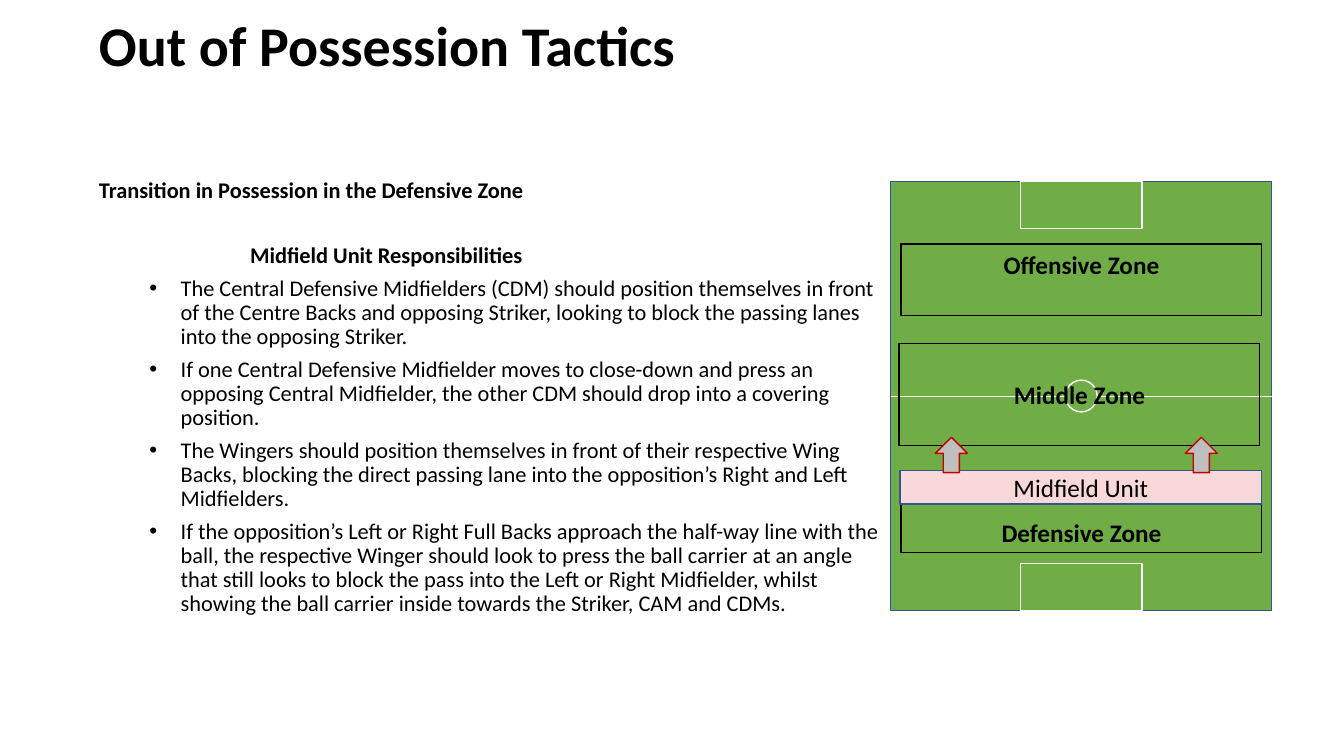
from pptx import Presentation
from pptx.dml.color import RGBColor
from pptx.enum import shapes, text
from pptx.oxml.ns import qn
from pptx.util import Cm, Pt
from lxml import etree

# Content
TITLE = "Out of Possession Tactics"
# (text, kind of paragraph)
BODY = [
    ("Transition in Possession in the Defensive Zone", "topic"),
    ("Midfield Unit Responsibilities", "heading"),
    ("The Central Defensive Midfielders (CDM) should position themselves in front of the "
     "Centre Backs and opposing Striker, looking to block the passing lanes into the "
     "opposing Striker.", "bullet"),
    ("If one Central Defensive Midfielder moves to close-down and press an opposing Central "
     "Midfielder, the other CDM should drop into a covering position.", "bullet"),
    ("The Wingers should position themselves in front of their respective Wing Backs, "
     "blocking the direct passing lane into the opposition’s Right and Left Midfielders.",
     "bullet"),
    ("If the opposition’s Left or Right Full Backs approach the half-way line with the ball, "
     "the respective Winger should look to press the ball carrier at an angle that still "
     "looks to block the pass into the Left or Right Midfielder, whilst showing the ball "
     "carrier inside towards the Striker, CAM and CDMs.", "bullet"),
]
# (name, left, top, height, anchor), lengths in cm
ZONES = [
    ("Offensive Zone", 22.71, 6.15, 1.8, text.MSO_ANCHOR.TOP),
    ("Middle Zone", 22.66, 8.66, 2.57, text.MSO_ANCHOR.MIDDLE),
    ("Defensive Zone", 22.71, 12.12, 1.8, text.MSO_ANCHOR.BOTTOM),
]
UNIT = "Midfield Unit"

# Format
COLORS = {"grass": "70AD47", "edge": "325491", "white": "FFFFFF", "black": "000000",
          "unit": "F8D8D8", "arrow": "BFBFBF", "red": "C00000"}
# kind: (left margin cm, first-line indent cm, bold, space after pt)
KINDS = {"topic": (0, 0, True, 29), "heading": (3.81, 0, True, 6),
         "bullet": (2.06, -0.79, False, 6)}
PITCH = (22.45, 4.57, 9.6, 10.82)
ZONE_W = 9.09
GOAL_W, GOAL_H = 3.07, 1.19
CIRCLE = 0.8
ARROW_W, ARROW_H, ARROW_TOP = 0.81, 0.89, 11.02
ARROW_LEFTS = (23.57, 29.87)

RECT = shapes.MSO_SHAPE.RECTANGLE


def rgb(name):
    return RGBColor.from_string(COLORS[name])


def set_font(font, size, bold=False):
    for key, value in {"name": "Calibri", "size": Pt(size), "bold": bold}.items():
        setattr(font, key, value)
    font.color.rgb = rgb("black")


def place(sp, box):
    for key, value in zip(("left", "top", "width", "height"), box):
        setattr(sp, key, Cm(value))


def add_box(kind, box, line, fill=None):
    sp = s.shapes.add_shape(kind, *[Cm(v) for v in box])
    sp.shadow.inherit = False
    if fill:
        sp.fill.solid()
        sp.fill.fore_color.rgb = rgb(fill)
    else:
        sp.fill.background()
    sp.line.color.rgb = rgb(line)
    sp.line.width = Pt(1)
    return sp


def add_label(sp, label, anchor, bold):
    tf = sp.text_frame
    tf.word_wrap = True
    tf.vertical_anchor = anchor
    p = tf.paragraphs[0]
    p.alignment = text.PP_ALIGN.CENTER
    r = p.add_run()
    r.text = label
    set_font(r.font, 18, bold)


def set_frame(tf):
    for key, value in {"word_wrap": True, "auto_size": text.MSO_AUTO_SIZE.NONE,
                       "vertical_anchor": text.MSO_ANCHOR.MIDDLE}.items():
        setattr(tf, key, value)


prs = Presentation()
prs.slide_width, prs.slide_height = Cm(33.87), Cm(19.05)
s = prs.slides.add_slide(prs.slide_layouts[1])

# Title
title, body = s.placeholders
place(title, (2.24, 0.33, 15.6, 1.8))
set_frame(title.text_frame)
p = title.text_frame.paragraphs[0]
p.alignment = text.PP_ALIGN.LEFT
p.line_spacing = 0.9
r = p.add_run()
r.text = TITLE
set_font(r.font, 40, True)

# Body list
place(body, (2.24, 2.13, 20.5, 15.8))
tf = body.text_frame
set_frame(tf)
for i, (line, kind) in enumerate(BODY):
    margin, indent, bold, after = KINDS[kind]
    p = tf.add_paragraph() if i else tf.paragraphs[0]
    for key, value in {"line_spacing": 0.9, "space_before": Pt(0),
                       "space_after": Pt(after)}.items():
        setattr(p, key, value)
    pPr = p._p.get_or_add_pPr()
    pPr.set("marL", str(Cm(margin)))
    pPr.set("indent", str(Cm(indent)))
    if kind == "bullet":
        etree.SubElement(pPr, qn("a:buFont")).set("typeface", "Arial")
        etree.SubElement(pPr, qn("a:buChar")).set("char", "•")
    else:
        etree.SubElement(pPr, qn("a:buNone"))
    r = p.add_run()
    r.text = line
    set_font(r.font, 16, bold)

# Pitch with half-way line, centre circle and goal areas
x, y, w, h = PITCH
mid_x, mid_y = x + w / 2, y + h / 2
pitch = add_box(RECT, PITCH, "edge", "grass")
for side, end_x in ((1, mid_x - CIRCLE / 2), (3, mid_x + CIRCLE / 2)):
    half = s.shapes.add_connector(shapes.MSO_CONNECTOR.STRAIGHT, Cm(x), Cm(mid_y),
                                  Cm(end_x), Cm(mid_y))
    half.begin_connect(pitch, side)
    half.line.color.rgb = rgb("white")
    half.line.width = Pt(0.5)
    etree.SubElement(half._element.spPr, qn("a:effectLst"))
add_box(shapes.MSO_SHAPE.OVAL, (mid_x - CIRCLE / 2, mid_y - CIRCLE / 2, CIRCLE, CIRCLE),
        "white", "grass")
for goal_y in (y, y + h - GOAL_H):
    add_box(RECT, (mid_x - GOAL_W / 2, goal_y, GOAL_W, GOAL_H), "white", "grass")

# Zones and midfield unit
for name, left, top, height, anchor in ZONES:
    add_label(add_box(RECT, (left, top, ZONE_W, height), "black"), name, anchor, True)
unit = add_box(RECT, (22.68, 11.86, 9.12, 0.84), "edge", "unit")
add_label(unit, UNIT, text.MSO_ANCHOR.MIDDLE, False)

# Arrows for the forward movement
for left in ARROW_LEFTS:
    add_box(shapes.MSO_SHAPE.UP_ARROW, (left, ARROW_TOP, ARROW_W, ARROW_H), "red", "arrow")

prs.save("out.pptx")
